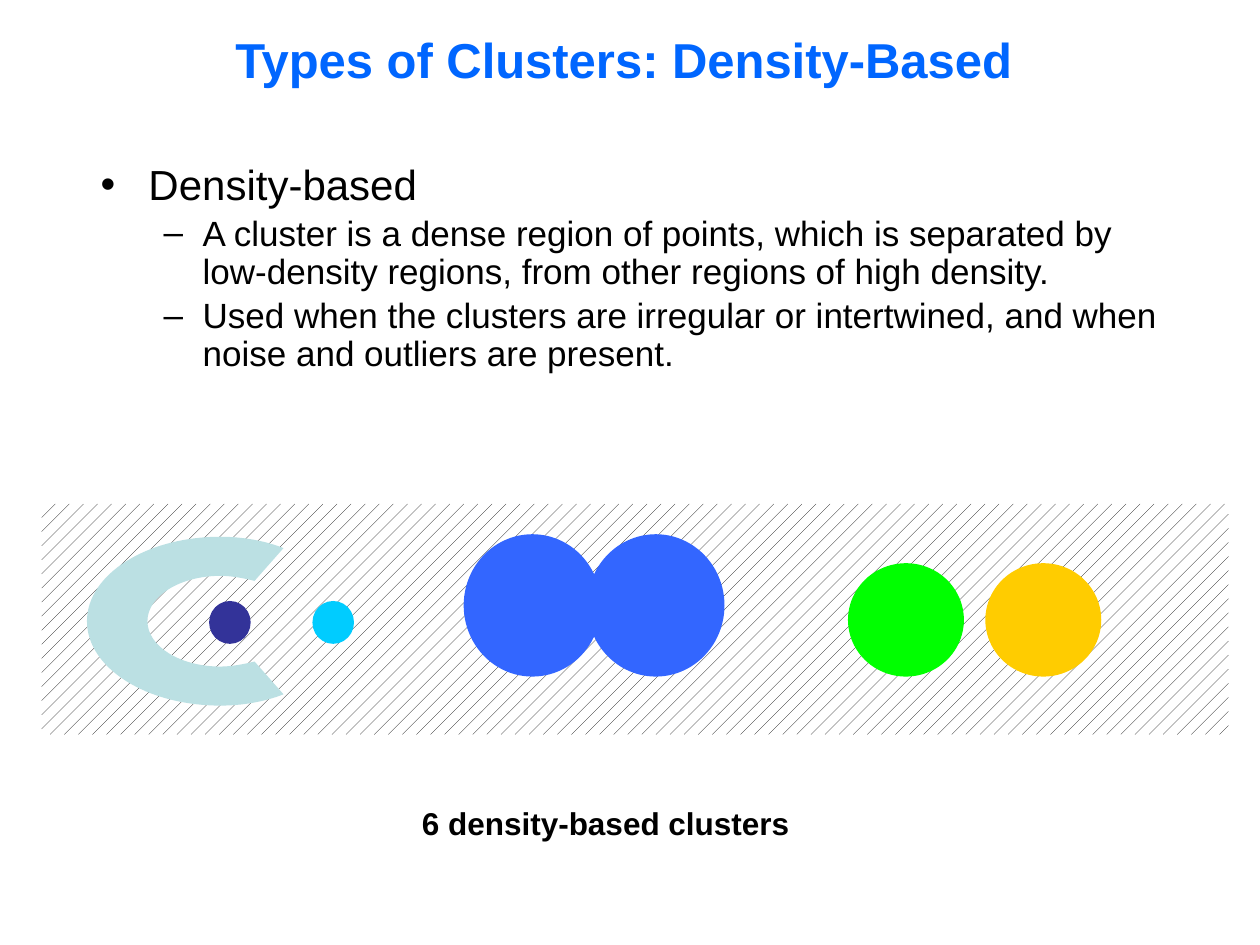
from dataclasses import dataclass

import pptx
import pptx.dml.color
import pptx.enum.dml
import pptx.enum.shapes
import pptx.enum.text
import pptx.oxml
import pptx.oxml.ns
import pptx.util

Inches = pptx.util.Inches
Pt = pptx.util.Pt
ALIGN = pptx.enum.text.PP_ALIGN
ANCHOR = pptx.enum.text.MSO_ANCHOR

COLORS = {
    "title": "0066FF", "text": "000000", "paper": "FFFFFF",
    "navy": "333399", "pale": "BBE0E3", "cyan": "00CCFF",
    "green": "00FF00", "gold": "FFCC00", "blue": "3366FF",
}


@dataclass
class Dot:
    left: float
    top: float
    width: float
    height: float
    color: str


@dataclass
class Line:
    text: str
    size: int
    color: str = "text"
    bold: bool = False
    align: ALIGN = ALIGN.LEFT
    bullet: str = ""
    level: int = 0
    margin: float = 0
    hang: float = 0


BODY = [
    Line("Density-based", 24, bullet="•", margin=0.38, hang=0.38),
    Line("A cluster is a dense region of points, which is separated by "
         "low-density regions, from other regions of high density.",
         20, bullet="–", level=1, margin=0.81, hang=0.31),
    Line("Used when the clusters are irregular or intertwined, and when "
         "noise and outliers are present.",
         20, bullet="–", level=1, margin=0.81, hang=0.31),
]

CORE = Dot(1.66, 4.77, 0.33, 0.34, "navy")
DOTS = [
    Dot(2.48, 4.77, 0.33, 0.34, "cyan"),
    Dot(6.73, 4.47, 0.92, 0.9, "green"),
    Dot(7.82, 4.47, 0.92, 0.9, "gold"),
    Dot(3.68, 4.24, 1.09, 1.13, "blue"),
    Dot(4.66, 4.24, 1.09, 1.13, "blue"),
]

# Half rims of the arc from tip to crown, as offsets from its centre
OUTER = [(0.58, 0.5), (0.64, 0.35), (0.67, 0.17), (0.67, 0),
         (0.67, -0.59), (0.37, -1.06), (0, -1.06)]
INNER = [(0.32, 0.27), (0.34, 0.19), (0.36, 0.09), (0.36, 0),
         (0.36, -0.32), (0.2, -0.58), (0, -0.58)]


def rgb(name: str) -> pptx.dml.color.RGBColor:
    return pptx.dml.color.RGBColor.from_string(COLORS[name])


def apply(target, values: dict) -> None:
    for name, value in values.items():
        setattr(target, name, value)


def add_bullet(para, line: Line) -> None:
    props = para._p.get_or_add_pPr()
    props.set("marL", str(Inches(line.margin)))
    props.set("indent", str(-Inches(line.hang)))
    space = pptx.oxml.ns.nsdecls("a")
    for xml in (f'<a:buFont {space} typeface="Arial"/>',
                f'<a:buChar {space} char="{line.bullet}"/>'):
        props.append(pptx.oxml.parse_xml(xml))


def add_text(slide, box: tuple, lines: list[Line], anchor=ANCHOR.TOP) -> None:
    frame = slide.shapes.add_textbox(*map(Inches, box)).text_frame
    apply(frame, {"word_wrap": True, "vertical_anchor": anchor})
    for index, line in enumerate(lines):
        para = frame.add_paragraph() if index else frame.paragraphs[0]
        apply(para, {"alignment": line.align, "level": line.level})
        if line.bullet:
            apply(para, {"line_spacing": 0.9,
                         "space_before": Pt(line.size * 0.2)})
            add_bullet(para, line)
        run = para.add_run()
        run.text = line.text
        apply(run.font, {"name": "Arial", "size": Pt(line.size),
                         "bold": line.bold})
        run.font.color.rgb = rgb(line.color)


def paint(shape, color: str) -> None:
    shape.shadow.inherit = False
    shape.line.fill.background()
    shape.fill.solid()
    shape.fill.fore_color.rgb = rgb(color)


def add_dot(group, dot: Dot) -> None:
    oval = group.shapes.add_shape(
        pptx.enum.shapes.MSO_SHAPE.OVAL,
        *map(Inches, (dot.left, dot.top, dot.width, dot.height)))
    paint(oval, dot.color)


def add_noise(group) -> None:
    field = group.shapes.add_shape(
        pptx.enum.shapes.MSO_SHAPE.RECTANGLE,
        *map(Inches, (0.33, 4, 9.42, 1.83)))
    field.shadow.inherit = False
    field.line.fill.background()
    field.fill.patterned()
    field.fill.pattern = pptx.enum.dml.MSO_PATTERN.PERCENT_10
    field.fill.fore_color.rgb = rgb("text")
    field.fill.back_color.rgb = rgb("paper")


def mirror(half: list[tuple]) -> list[tuple]:
    return half + [(-across, down) for across, down in half[-2::-1]]


def bend(steps: list) -> None:
    """Turn each three straight steps into one curve."""
    for first, second, third in zip(steps[::3], steps[1::3], steps[2::3]):
        curve = pptx.oxml.parse_xml(
            f'<a:cubicBezTo {pptx.oxml.ns.nsdecls("a")}/>')
        first.addprevious(curve)
        for step in (first, second, third):
            curve.append(step[0])
            step.getparent().remove(step)


def add_arc(group) -> None:
    rim = mirror(OUTER)
    points = [(Inches(1.75 + across), Inches(4.93 + down))
              for across, down in rim + mirror(INNER)[::-1]]
    pen = group.shapes.build_freeform(*points[0])
    pen.add_line_segments(points[1:], close=True)
    arc = pen.convert_to_shape()
    paint(arc, "pale")

    # The frame holds the full ellipse, and the opening turns to the right
    tall = Inches(2.12)
    arc._element.xpath(".//a:path")[0].set("h", str(tall))
    apply(arc, {"height": tall, "rotation": 270})
    steps = arc._element.xpath(".//a:lnTo")
    bend(steps[:len(rim) - 1])
    bend(steps[len(rim):])


def main() -> None:
    deck = pptx.Presentation()
    apply(deck, {"slide_width": Inches(10), "slide_height": Inches(7.5)})
    slide = deck.slides.add_slide(deck.slide_layouts[6])

    # Title and bullets
    title = Line("Types of Clusters: Density-Based", 28, "title", True,
                 ALIGN.CENTER)
    add_text(slide, (0.42, 0.17, 9.06, 0.6), [title], ANCHOR.MIDDLE)
    add_text(slide, (0.7, 1.25, 8.75, 5.59), BODY)

    # Clusters on a field of noise
    group = slide.shapes.add_group_shape()
    add_noise(group)
    add_dot(group, CORE)
    add_arc(group)
    for dot in DOTS:
        add_dot(group, dot)

    # Caption
    label = Line("6 density-based clusters", 18, bold=True)
    add_text(slide, (3.25, 6.33, 3.5, 0.4), [label])

    deck.save("out.pptx")


if __name__ == "__main__":
    main()
